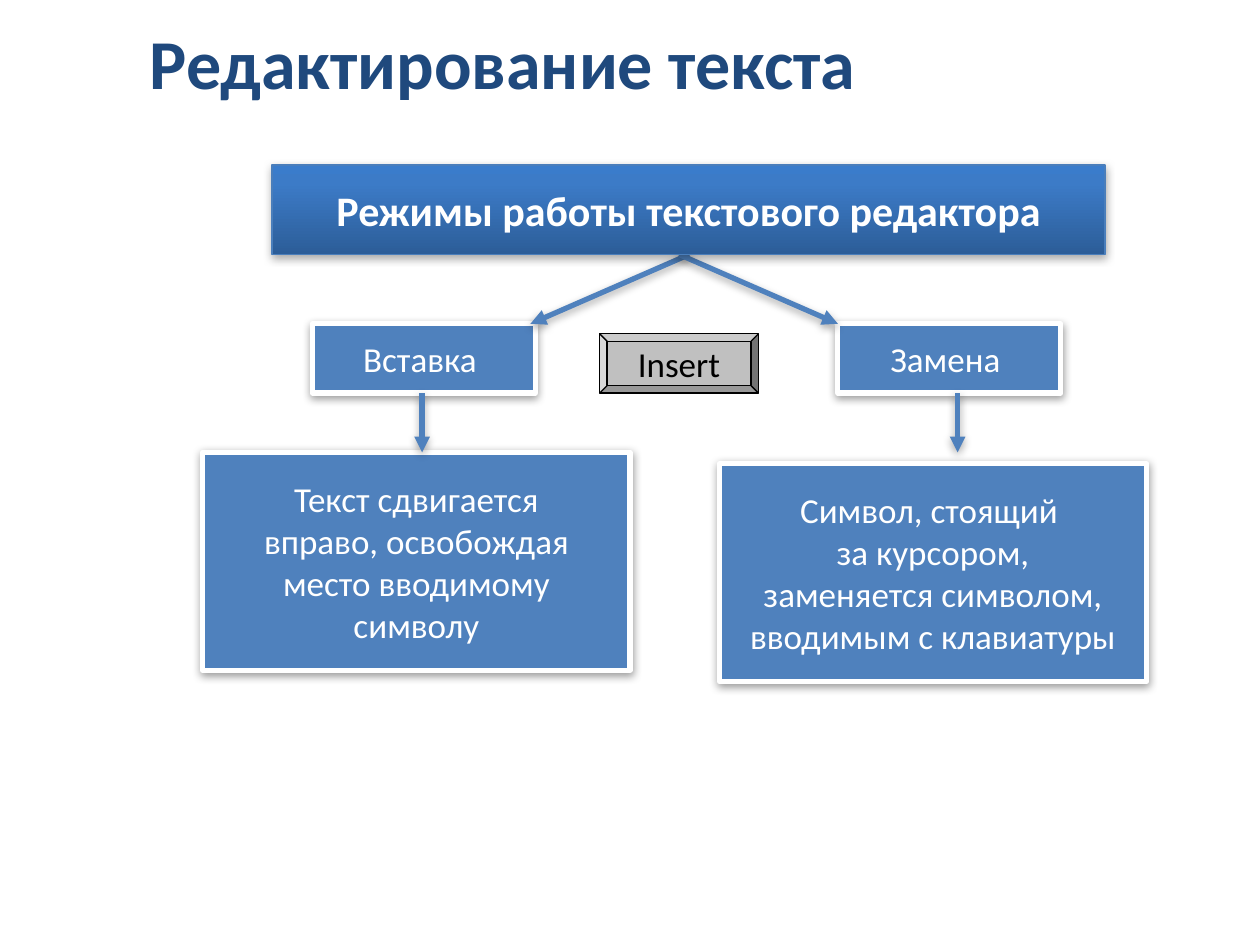
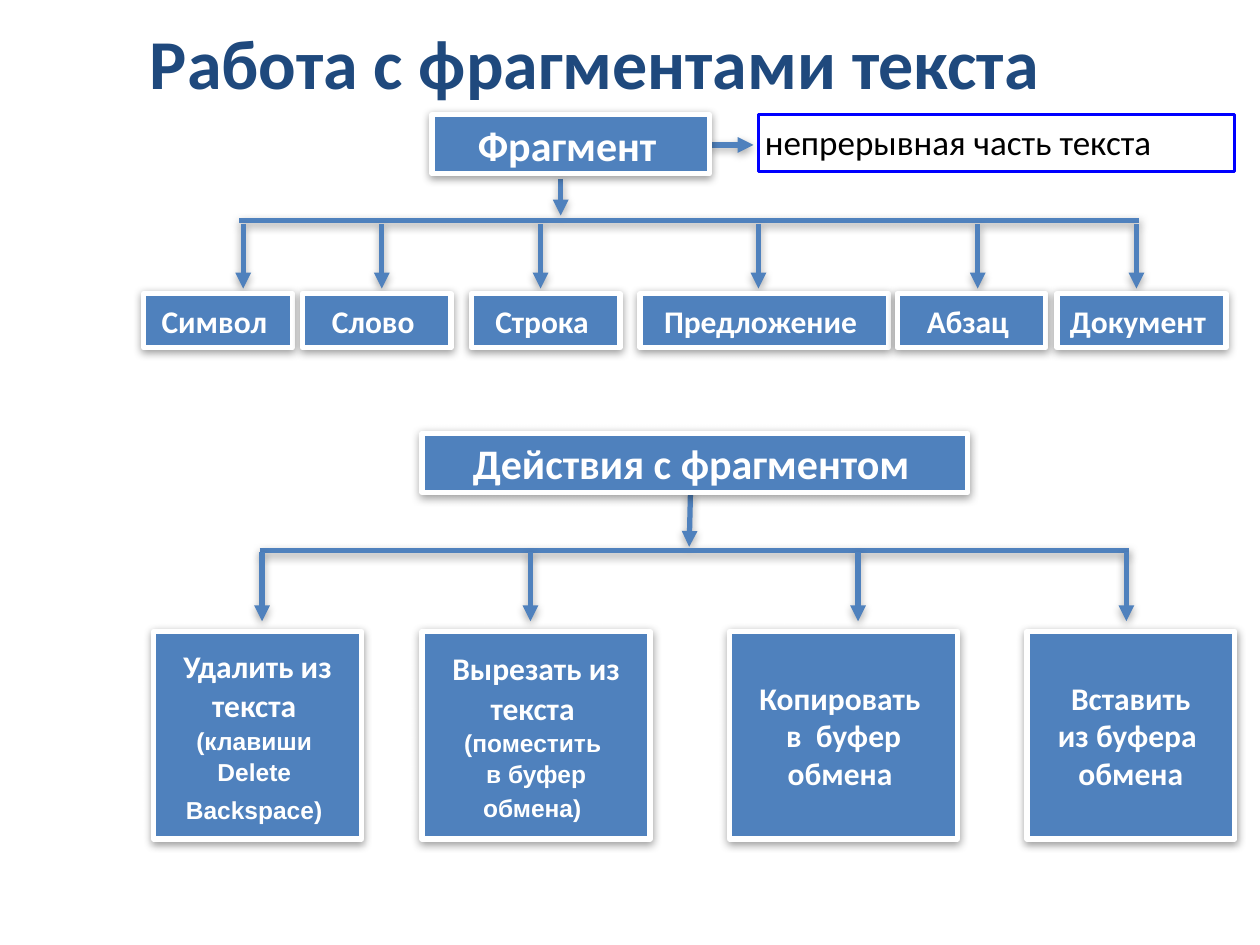
"""Build two slides on editing text and working with text fragments."""
from copy import deepcopy

from lxml import etree
from pptx import Presentation
from pptx.dml.color import RGBColor
from pptx.enum.shapes import MSO_CONNECTOR, MSO_SHAPE
from pptx.enum.text import MSO_ANCHOR, MSO_AUTO_SIZE, PP_ALIGN
from pptx.oxml.ns import qn
from pptx.util import Emu, Pt

PX = 9144
NAVY = RGBColor(0x1F, 0x49, 0x7D)
BLUE = RGBColor(0x4F, 0x81, 0xBD)
HEADER_EDGE = RGBColor(0x4A, 0x7E, 0xBB)
DEFINITION_EDGE = RGBColor(0x00, 0x00, 0xFF)
KEY_GREY = RGBColor(0xC0, 0xC0, 0xC0)
WHITE = RGBColor(0xFF, 0xFF, 0xFF)
BLACK = RGBColor(0x00, 0x00, 0x00)
HEADER_STOPS = [
    (0, RGBColor(0x2C, 0x5D, 0x98)),
    (0.8, RGBColor(0x3C, 0x7B, 0xC7)),
    (1, RGBColor(0x3A, 0x7C, 0xCB)),
]

RECTANGLE, BEVEL = MSO_SHAPE.RECTANGLE, MSO_SHAPE.BEVEL
STRAIGHT = MSO_CONNECTOR.STRAIGHT
TOP, MIDDLE = MSO_ANCHOR.TOP, MSO_ANCHOR.MIDDLE
LEFT, CENTER = PP_ALIGN.LEFT, PP_ALIGN.CENTER
NO_FIT = MSO_AUTO_SIZE.NONE

BOX_SHADOW = {"alpha": 38, "distance": 1.6}
STRONG_SHADOW = {"alpha": 35, "distance": 1.8}

TITLE_FONT = {"name": "Calibri", "size": Pt(40), "bold": True, "color": NAVY}
MODE_FONT = {"name": "Calibri", "size": Pt(20), "bold": False, "color": WHITE}
PLAIN_FONT = {**MODE_FONT, "color": BLACK}
HEADER_FONT = {**MODE_FONT, "size": Pt(24), "bold": True}
LABEL_FONT = {**HEADER_FONT, "size": Pt(18)}
DETAIL_FONT = {**LABEL_FONT, "name": "Arial", "size": Pt(14)}
DETAIL_END_FONT = {**DETAIL_FONT, "size": Pt(16)}


def px(length):
    """Turn whole px into EMU."""
    return Emu(length * PX)


def set_all(target, values):
    """Set attributes from a dict of format values."""
    for name, value in values.items():
        setattr(target, name, value)


def write(frame, paragraphs, font, align=CENTER, anchor=MIDDLE, spacing=None):
    """Fill a text frame; a paragraph is a string or a list of (text, font) runs."""
    set_all(frame, {"word_wrap": True, "auto_size": NO_FIT, "vertical_anchor": anchor})
    set_all(frame, {f"margin_{side}": px(5) for side in ("left", "top", "right", "bottom")})
    for index, content in enumerate(paragraphs):
        paragraph = frame.add_paragraph() if index else frame.paragraphs[0]
        set_all(paragraph, {"alignment": align, "line_spacing": spacing})
        runs = [(content, font)] if isinstance(content, str) else content
        for text, look in runs:
            run = paragraph.add_run()
            run.text = text
            set_all(run.font, {key: look[key] for key in ("name", "size", "bold")})
            run.font.color.rgb = look["color"]


def cast_shadow(effects, alpha, distance):
    """Add a downward soft shadow to an effect list."""
    shadow = etree.SubElement(
        effects, qn("a:outerShdw"), blurRad=str(Pt(5)), dist=str(Pt(distance)),
        dir="5400000", rotWithShape="0")
    shade = etree.SubElement(shadow, qn("a:srgbClr"), val=str(BLACK))
    etree.SubElement(shade, qn("a:alpha"), val=str(alpha * 1000))


def add_titled_slide(deck, title):
    """Add a title-only slide with the shared title style."""
    slide = deck.slides.add_slide(deck.slide_layouts[5])
    heading = slide.shapes.title
    set_all(heading, {"left": px(114), "top": px(16), "width": px(866), "height": px(78)})
    write(heading.text_frame, [title], TITLE_FONT, align=LEFT, spacing=0.8)
    return slide


def add_box(slide, place, paragraphs, font, fill=BLUE, edge=WHITE, weight=3,
            kind=RECTANGLE, shadow=BOX_SHADOW, **layout):
    """Add a framed box with text."""
    box = slide.shapes.add_shape(kind, *map(px, place))
    if fill is None:
        box.fill.background()
    else:
        box.fill.solid()
        box.fill.fore_color.rgb = fill
    box.line.color.rgb = edge
    box.line.width = Pt(weight)
    box.shadow.inherit = False
    if shadow:
        cast_shadow(box._element.spPr.find(qn("a:effectLst")), **shadow)
    write(box.text_frame, paragraphs, font, **layout)
    return box


def shade_header(header):
    """Give a header box its three-stop vertical gradient."""
    header.fill.gradient()
    header.fill.gradient_angle = 90
    stops = header._element.spPr.find(qn("a:gradFill")).find(qn("a:gsLst"))
    stops.append(deepcopy(stops[-1]))
    for stop, (position, color) in zip(header.fill.gradient_stops, HEADER_STOPS):
        stop.position = position
        stop.color.rgb = color


def add_line(slide, start, end, arrow=True):
    """Add a shadowed line, with an arrowhead at its end by default."""
    line = slide.shapes.add_connector(STRAIGHT, *map(px, (*start, *end)))
    line.line.color.rgb = BLUE
    line.line.width = Pt(3)
    properties = line._element.spPr
    if arrow:
        etree.SubElement(properties.find(qn("a:ln")), qn("a:tailEnd"), type="triangle")
    cast_shadow(etree.SubElement(properties, qn("a:effectLst")), **STRONG_SHADOW)


def add_branches(slide, bar, arrow_rows, arrow_columns):
    """Add a horizontal bar with arrows going down from it."""
    left, right, height = bar
    add_line(slide, (left, height), (right, height), arrow=False)
    top, bottom = arrow_rows
    for column in arrow_columns:
        add_line(slide, (column, top), (column, bottom))


def build_modes(deck):
    """Build the slide on the editor's insert and replace modes."""
    slide = add_titled_slide(deck, "Редактирование текста")
    modes = [
        ("Вставка ", 248, (161, 359), (547, 421), 335,
         ["Текст сдвигается", "вправо, освобождая", "место вводимому", "символу"]),
        ("Замена ", 665, (571, 368), (539, 665), 760,
         ["Символ, стоящий ", "за курсором,", "заменяется символом,",
          "вводимым с клавиатуры"]),
    ]
    for mode, left, effect_corner, (fork, tip), column, effect in modes:
        add_box(slide, (*effect_corner, 339, 173), effect, MODE_FONT)
        add_box(slide, (left, 257, 177, 55), [mode], MODE_FONT)
        add_line(slide, (fork, 202), (tip, 257))
        add_line(slide, (column, 312), (column, 359))
    add_box(slide, (476, 265, 126, 47), ["Insert"], PLAIN_FONT, fill=KEY_GREY,
            edge=BLACK, weight=0.75, kind=BEVEL, shadow=None)
    header = add_box(slide, (216, 131, 661, 71), ["Режимы работы текстового редактора"],
                     HEADER_FONT, edge=HEADER_EDGE, weight=0.75, shadow=STRONG_SHADOW)
    shade_header(header)


def build_fragments(deck):
    """Build the slide on fragment types and actions."""
    slide = add_titled_slide(deck, "Работа с фрагментами текста")
    add_box(slide, (602, 91, 378, 45), ["непрерывная часть текста"], PLAIN_FONT,
            fill=None, edge=DEFINITION_EDGE, weight=1.5, shadow=None,
            align=LEFT, anchor=TOP)
    add_line(slide, (563, 115), (598, 115))
    add_line(slide, (445, 142), (445, 171))
    add_line(slide, (548, 391), (547, 434))
    for header, place in [("Фрагмент", (343, 91, 220, 47)),
                          ("Действия с фрагментом", (335, 344, 433, 47))]:
        add_box(slide, place, [[(header, HEADER_FONT), (" ", LABEL_FONT)]], HEADER_FONT)

    fragments = [("Символ ", 114, 118), ("Слово ", 240, 118), ("Строка ", 374, 118),
                 ("Предложение ", 508, 197), ("Абзац ", 712, 118), ("Документ ", 839, 134)]
    add_branches(slide, (190, 904, 175), (178, 229), (193, 303, 429, 602, 776, 902))
    for fragment, left, width in fragments:
        add_box(slide, (left, 233, width, 43), [fragment], LABEL_FONT)

    actions = [
        (122, 165, 1.05, ["Удалить из", "текста ", [("(клавиши ", DETAIL_FONT)],
                          [("Delete ", DETAIL_FONT)],
                          [("Backspace)", DETAIL_FONT), (" ", LABEL_FONT)]]),
        (335, 181, 1.05, ["Вырезать из", "текста ", [("(поместить ", DETAIL_FONT)],
                          [("в буфер", DETAIL_FONT)],
                          [("обмена)", DETAIL_FONT), (" ", DETAIL_END_FONT)]]),
        (579, 181, None, ["Копировать ", "в  буфер", "обмена "]),
        (815, 165, None, ["Вставить", "из буфера ", "обмена"]),
    ]
    add_branches(slide, (206, 896, 437), (438, 493), (208, 421, 681, 894))
    for left, width, spacing, action in actions:
        add_box(slide, (left, 501, width, 165), action, LABEL_FONT, spacing=spacing)


def main():
    """Create the deck and save it."""
    deck = Presentation()
    set_all(deck, {"slide_width": px(1000), "slide_height": px(750)})
    build_modes(deck)
    build_fragments(deck)
    deck.save("out.pptx")


if __name__ == "__main__":
    main()
